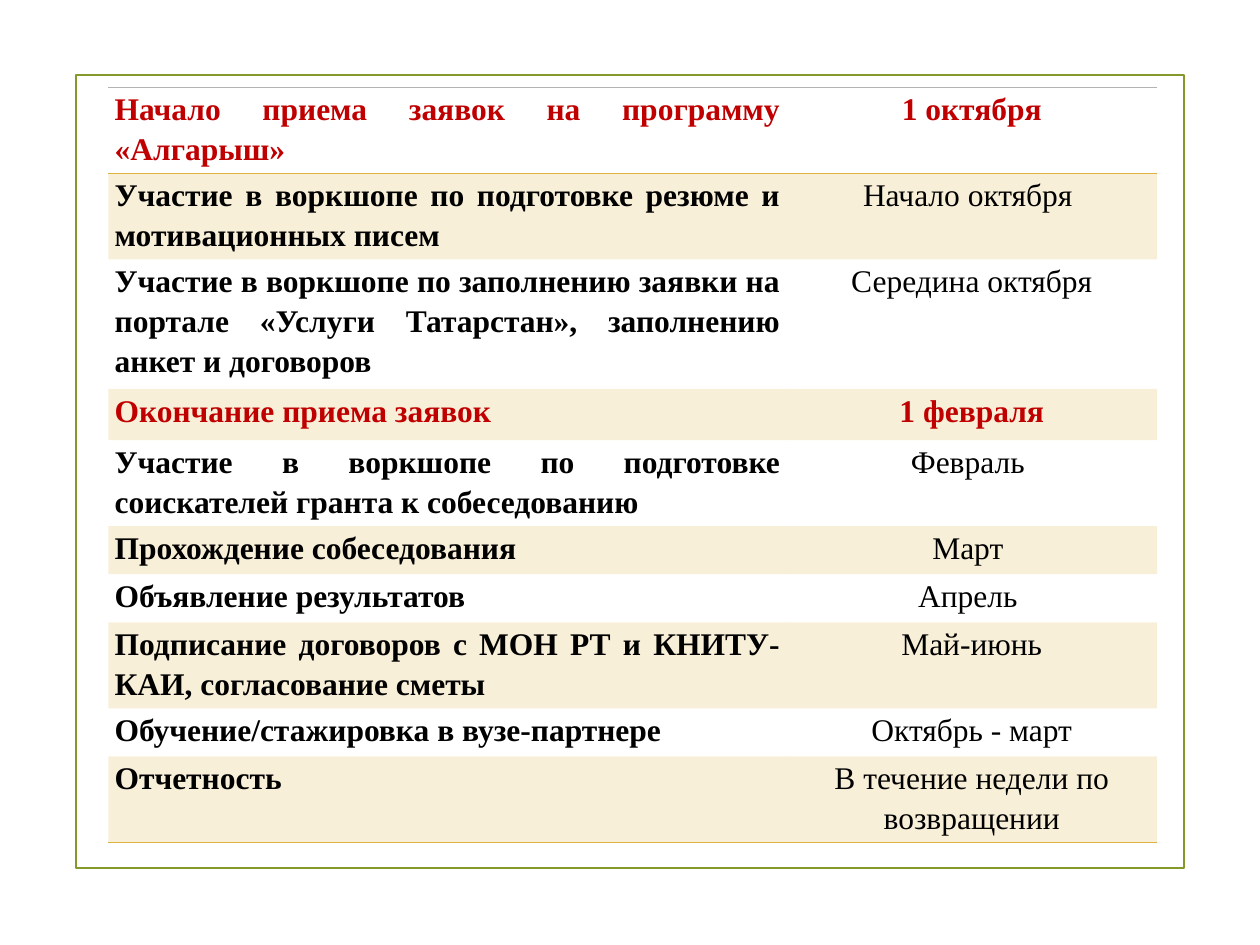
"""Build the slide with the schedule of the grant programme."""
from lxml import etree
from pptx import Presentation
from pptx.dml.color import RGBColor
from pptx.enum import shapes, text
from pptx.oxml import ns
from pptx.util import Pt

COLORS = {"frame": "83992A", "gold": "DEB340", "top": "B3B3B3", "key": "C00000", "body": "000000"}
SCHEDULE = [
    ("Начало приема заявок на программу «Алгарыш»", "1 октября", 49.2),
    ("Участие в воркшопе по подготовке резюме и мотивационных писем", "Начало октября ", 49.2),
    ("Участие в воркшопе по заполнению заявки на портале «Услуги Татарстан», "
     "заполнению анкет и договоров", "Середина октября", 74),
    ("Окончание приема заявок ", "1 февраля", 29.2),
    ("Участие в воркшопе по подготовке соискателей гранта к собеседованию", "Февраль ", 49.2),
    ("Прохождение собеседования", "Март ", 27.5),
    ("Объявление результатов", "Апрель ", 27.5),
    ("Подписание договоров с МОН РТ и КНИТУ-КАИ, согласование сметы", "Май-июнь", 49.2),
    ("Обучение/стажировка в вузе-партнере", "Октябрь - март", 27.5),
    ("Отчетность", "В течение недели по возвращении", 49.2),
]
KEY_ROWS = (0, 3)
LAST_ROW = len(SCHEDULE) - 1
ALIGNMENTS = (text.PP_ALIGN.JUSTIFY, text.PP_ALIGN.CENTER)


def add_border(cell, side, color=None, width=1):
    line = etree.SubElement(cell._tc.get_or_add_tcPr(), ns.qn(f"a:ln{side}"), w=str(Pt(width)))
    if color is None:
        etree.SubElement(line, ns.qn("a:noFill"))
    else:
        fill = etree.SubElement(line, ns.qn("a:solidFill"))
        etree.SubElement(fill, ns.qn("a:srgbClr"), val=color)


presentation = Presentation()
presentation.slide_width, presentation.slide_height = Pt(720), Pt(540)
slide = presentation.slides.add_slide(presentation.slide_layouts[6])

frame = slide.shapes.add_shape(shapes.MSO_SHAPE.RECTANGLE, Pt(43.6), Pt(42.8), Pt(633), Pt(453.2))
frame.shadow.inherit = False
frame.fill.background()
frame.line.color.rgb = RGBColor.from_string(COLORS["frame"])
frame.line.width = Pt(1.25)

table_height = sum(height for _, _, height in SCHEDULE)
table = slide.shapes.add_table(
    len(SCHEDULE), 2, Pt(61.9), Pt(49.9), Pt(599.3), Pt(table_height)).table
table.first_row = table.horz_banding = False
table.columns[0].width, table.columns[1].width = Pt(387.5), Pt(211.8)

for row, (stage, date, height) in enumerate(SCHEDULE):
    table.rows[row].height = Pt(height)
    top = {0: (COLORS["top"], 0.5), 1: (COLORS["gold"], 1)}.get(row, (None, 1))
    bottom = COLORS["gold"] if row in (0, LAST_ROW) else None
    for column, content in enumerate((stage, date)):
        cell = table.cell(row, column)
        cell.margin_left = cell.margin_right = Pt(3.6)
        cell.margin_top = cell.margin_bottom = Pt(0)
        add_border(cell, "L")
        add_border(cell, "R")
        add_border(cell, "T", *top)
        add_border(cell, "B", bottom)
        if row % 2:
            cell.fill.solid()
            cell.fill.fore_color.rgb = RGBColor.from_string(COLORS["gold"])
            band_color = cell._tc.tcPr.find(ns.qn("a:solidFill"))[0]
            etree.SubElement(band_color, ns.qn("a:alpha"), val="20000")
        else:
            cell.fill.background()

        paragraph = cell.text_frame.paragraphs[0]
        paragraph.alignment = ALIGNMENTS[column]
        paragraph.line_spacing = 1.15
        run = paragraph.add_run()
        run.text = content
        run.font.name = "Times New Roman"
        run.font.size = Pt(18)
        run.font.bold = column == 0 or row in KEY_ROWS
        run.font.color.rgb = RGBColor.from_string(COLORS["key" if row in KEY_ROWS else "body"])

presentation.save("out.pptx")
